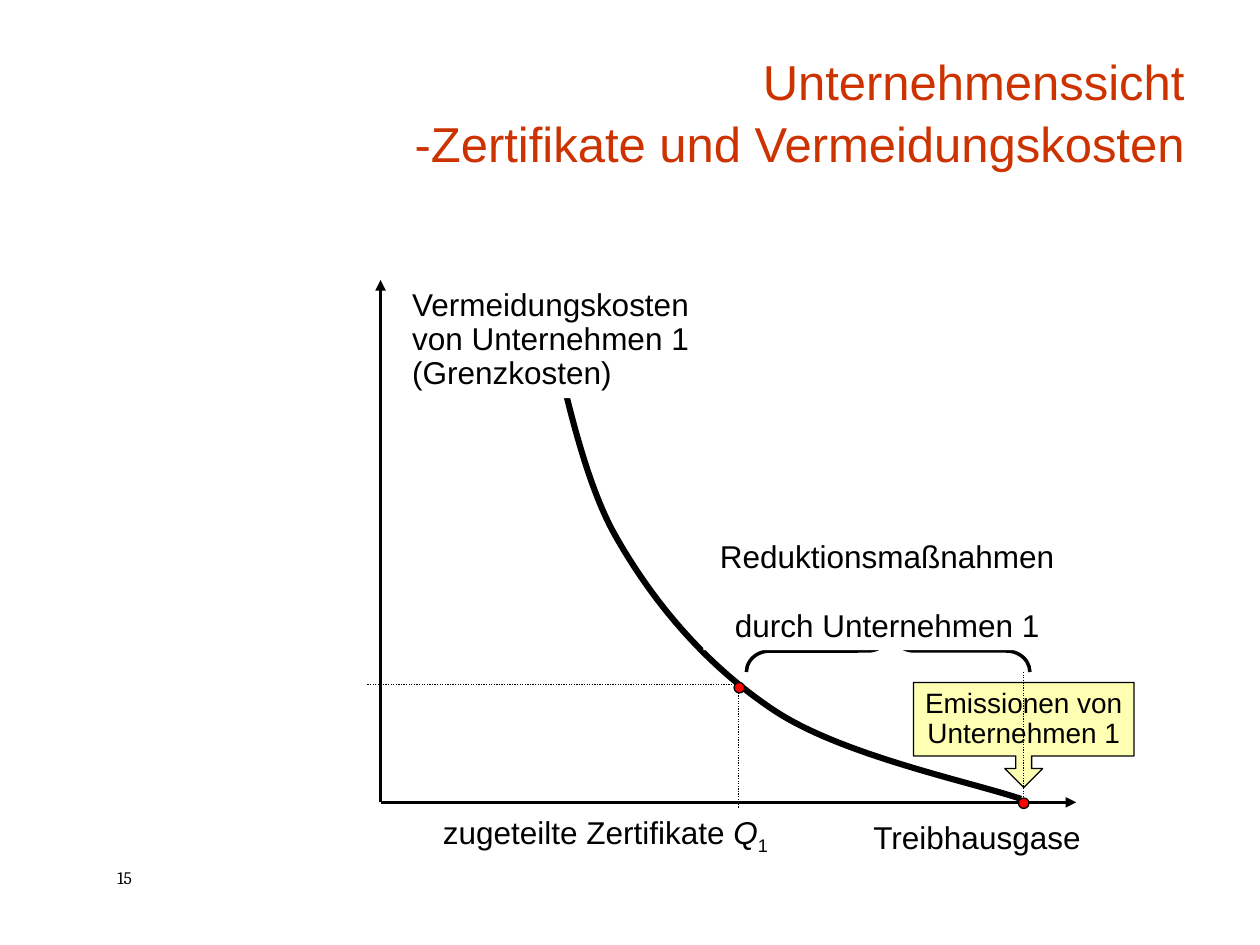
from lxml.etree import SubElement
from pptx import Presentation
from pptx.dml.color import RGBColor
from pptx.enum.dml import MSO_LINE
from pptx.enum.shapes import MSO_CONNECTOR, MSO_SHAPE
from pptx.enum.text import MSO_ANCHOR, MSO_AUTO_SIZE, PP_ALIGN
from pptx.oxml.ns import qn
from pptx.util import Pt

BLACK, RED, RUST, PALE, WHITE = "000000", "FF0000", "CC3300", "FFFFB3", "FFFFFF"


def paint(form, color):
    form.solid()
    form.fore_color.rgb = RGBColor.from_string(color)


def write(shape, *paras, size=18, font="Arial", color=BLACK, align=PP_ALIGN.LEFT,
          anchor=MSO_ANCHOR.TOP, lead=1.0, gap=0, wrap=True):
    frame = shape.text_frame
    frame.word_wrap = wrap
    frame.auto_size = MSO_AUTO_SIZE.NONE
    frame.vertical_anchor = anchor
    for index, runs in enumerate(paras):
        para = frame.add_paragraph() if index else frame.paragraphs[0]
        para.alignment = align
        para.line_spacing = lead
        para.space_before = Pt(gap if index else 0)
        for words, style in [(runs, {})] if isinstance(runs, str) else runs:
            for row, line in enumerate(words.split("\n")):
                if row:
                    para.add_line_break()
                run = para.add_run()
                run.text = line
                run.font.name = font
                run.font.size = Pt(size)
                run.font.italic = style.get("italic", False)
                paint(run.font.fill, color)
                if "base" in style:
                    run.font._element.set("baseline", str(style["base"] * 1000))
        for item in para._p.findall(qn("a:br")):
            SubElement(item, qn("a:rPr")).set("sz", str(size * 100))


def label(slide, box, *paras, **style):
    shape = slide.shapes.add_textbox(*map(Pt, box))
    write(shape, *paras, **style)
    return shape


def form(slide, kind, box, fill=None, line=BLACK, width=0.75):
    shape = slide.shapes.add_shape(kind, *map(Pt, box))
    shape.shadow.inherit = False
    if fill:
        paint(shape.fill, fill)
    else:
        shape.fill.background()
    if line:
        paint(shape.line.fill, line)
        shape.line.width = Pt(width)
    else:
        shape.line.fill.background()
    return shape


def rule(slide, start, end, width=0.75, arrow=False):
    line = slide.shapes.add_connector(MSO_CONNECTOR.STRAIGHT, *map(Pt, (*start, *end)))
    paint(line.line.fill, BLACK)
    line.line.width = Pt(width)
    if arrow:
        SubElement(line.line._get_or_add_ln(), qn("a:tailEnd")).set("type", "triangle")
    else:
        line.line.dash_style = MSO_LINE.ROUND_DOT
    SubElement(line._element.spPr, qn("a:effectLst"))


def dot(slide, x, y):
    form(slide, MSO_SHAPE.OVAL, (x - 3, y - 3, 6, 6), RED)


def curve(slide, points):
    start, *rest = points
    pen = slide.shapes.build_freeform(Pt(start[0]), Pt(start[1]))
    pen.add_line_segments([(Pt(x), Pt(y)) for x, y in rest], close=False)
    shape = pen.convert_to_shape()
    shape.shadow.inherit = False
    shape.fill.background()
    paint(shape.line.fill, BLACK)
    shape.line.width = Pt(3.5)
    steps = list(shape._element.iter(qn("a:lnTo")))
    for first in range(0, len(steps), 3):
        bend = SubElement(steps[first].getparent(), qn("a:cubicBezTo"))
        for step in steps[first:first + 3]:
            bend.append(step[0])
            step.getparent().remove(step)


def head(slide, box):
    title = slide.shapes.title
    title.left, title.top, title.width, title.height = map(Pt, box)
    write(title, "Unternehmenssicht\n-Zertifikate und Vermeidungskosten", size=28,
          color=RUST, align=PP_ALIGN.RIGHT, anchor=MSO_ANCHOR.BOTTOM, lead=1.05)


def graph(slide, box):
    left, top, width, height = box
    base = top + height

    def at(x, y):
        return left + x, top + y

    rule(slide, (left, base), (left + width, base), 2, True)
    curve(slide, [at(*point) for point in (
        (92, 5), (98.5, 28), (111, 103.5), (133, 144),
        (155.5, 184.5), (186.5, 220.5), (225, 246),
        (263.5, 271.5), (336, 286.5), (366, 296.5))])
    rule(slide, (left, base), (left, top), 2, True)
    costs = form(slide, MSO_SHAPE.RECTANGLE, (*at(11, 2), 174, 65.5), WHITE, None)
    write(costs, "Vermeidungskosten\nvon Unternehmen 1 (Grenzkosten)", lead=0.9)
    label(slide, (*at(274.5, 302), 204, 31), "Treibhausgase", lead=1.1)
    dot(slide, *at(367.5, 299))

    note = form(slide, MSO_SHAPE.DOWN_ARROW_CALLOUT, (*at(304.5, 230), 126, 60), PALE)
    for index, value in enumerate((0.15, 0.18, 0.18, 0.7)):
        note.adjustments[index] = value
    write(note, "Emissionen von\nUnternehmen 1", size=16, align=PP_ALIGN.CENTER,
          anchor=MSO_ANCHOR.MIDDLE, lead=0.9, wrap=False)

    rule(slide, at(204.5, 230), at(204.5, 302))
    rule(slide, at(201, 231), at(-7.5, 231))
    label(slide, (*at(28.5, 298.5), 222, 34),
          [("zugeteilte Zertifikate", {}), (" Q", {"italic": True}), ("1", {"base": -25})],
          lead=1.1)
    dot(slide, *at(205, 233))

    brace = form(slide, MSO_SHAPE.LEFT_BRACE, (*at(278, 131), 24, 162), width=2)
    brace.rotation = 90
    brace.adjustments[0], brace.adjustments[1] = 0.56, 0.49
    rule(slide, at(367.5, 224), at(367.5, 296))
    steps = form(slide, MSO_SHAPE.RECTANGLE, (*at(184.5, 146), 210, 65.5), WHITE, None)
    write(steps, "Reduktionsmaßnahmen", "durch Unternehmen 1",
          align=PP_ALIGN.CENTER, lead=0.9, gap=20)


def main():
    deck = Presentation()
    deck.slide_width, deck.slide_height = Pt(720), Pt(540)
    slide = deck.slides.add_slide(deck.slide_layouts[5])
    label(slide, (60, 492, 48, 21), "15", size=10, font="Cambria")
    head(slide, (72, 30, 612, 72))
    graph(slide, (217.5, 160, 397.5, 298.5))
    deck.save("out.pptx")


if __name__ == "__main__":
    main()
